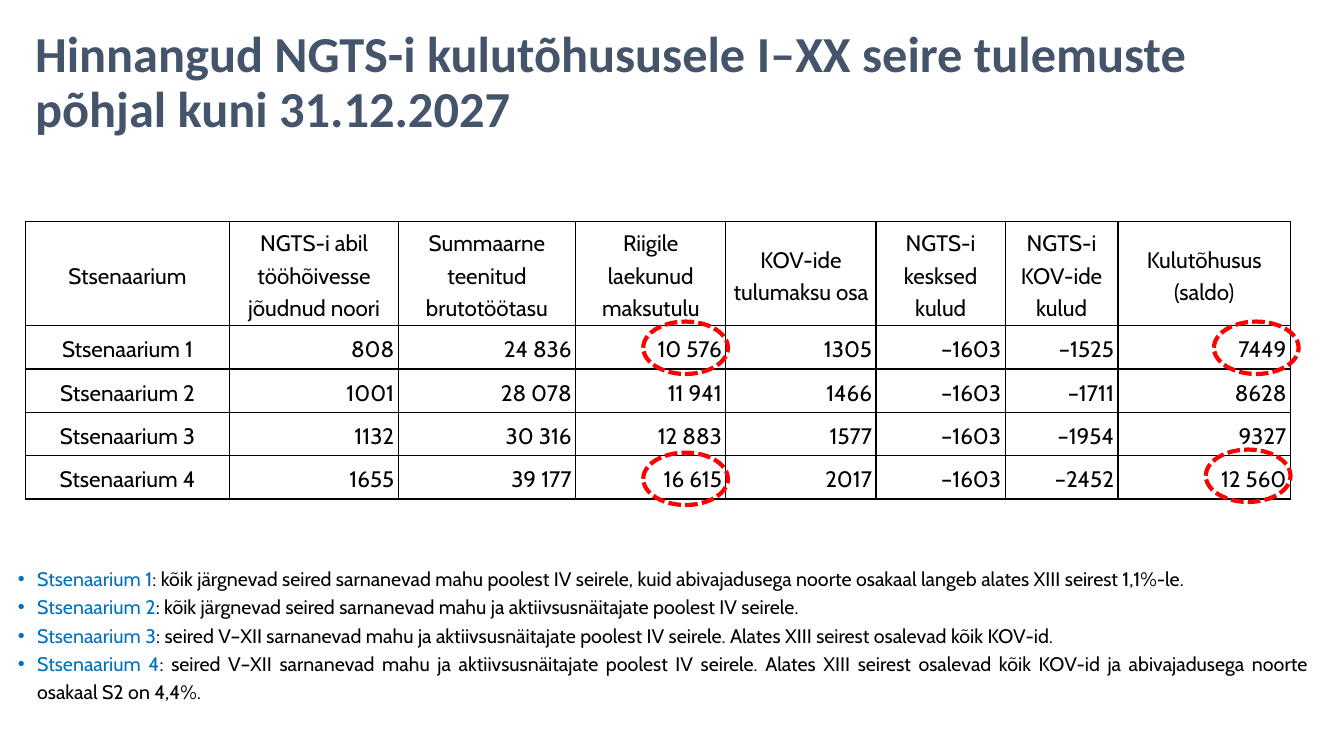
from dataclasses import dataclass

from lxml.etree import SubElement
from pptx import Presentation
from pptx.dml.color import RGBColor
from pptx.enum.dml import MSO_LINE
from pptx.enum.shapes import MSO_SHAPE
from pptx.enum.text import MSO_ANCHOR, PP_ALIGN
from pptx.oxml.ns import qn
from pptx.util import Inches, Pt


@dataclass(frozen=True)
class Theme:
    title_font: str = "Calibri"
    body_font: str = "Cabin"
    title_color: str = "44546A"
    ink: str = "000000"
    accent: str = "0070C0"
    mark: str = "FF0000"
    title_size: int = 36
    table_size: int = 16
    note_size: int = 14
    border_width: int = 1
    mark_width: int = 3


theme = Theme()


def add_text(p, text, font=theme.body_font, size=theme.table_size,
             color=theme.ink, bold=False, align=None, spacing=1.2, after=0):
    p.alignment = align
    p.line_spacing = spacing
    p.space_after = Pt(after)
    r = p.add_run()
    r.text = text
    r.font.name = font
    r.font.size = Pt(size)
    r.font.bold = bold
    r.font.color.rgb = RGBColor.from_string(color)


def add_borders(cell):
    tc_pr = cell._tc.get_or_add_tcPr()
    for side in ("lnL", "lnR", "lnT", "lnB"):
        ln = SubElement(tc_pr, qn(f"a:{side}"), w=str(Pt(theme.border_width)))
        fill = SubElement(ln, qn("a:solidFill"))
        SubElement(fill, qn("a:srgbClr"), val=theme.ink)


prs = Presentation()
prs.slide_width = Inches(13.33)
prs.slide_height = Inches(7.5)
s = prs.slides.add_slide(prs.slide_layouts[6])

title = s.shapes.add_textbox(Inches(0.25), Inches(0.18), Inches(12.66), Inches(1.3))
tf = title.text_frame
tf.word_wrap = True
tf.vertical_anchor = MSO_ANCHOR.MIDDLE
add_text(tf.paragraphs[0],
         "Hinnangud NGTS-i kulutõhususele I–XX seire tulemuste põhjal kuni 31.12.2027",
         font=theme.title_font, size=theme.title_size, color=theme.title_color,
         bold=True, spacing=0.9)

notes = [
    ": kõik järgnevad seired sarnanevad mahu poolest IV seirele, kuid abivajadusega "
    "noorte osakaal langeb alates XIII seirest 1,1%-le.",
    ": kõik järgnevad seired sarnanevad mahu ja aktiivsusnäitajate poolest IV seirele.",
    ": seired V–XII sarnanevad mahu ja aktiivsusnäitajate poolest IV seirele. "
    "Alates XIII seirest osalevad kõik KOV-id.",
    ": seired V–XII sarnanevad mahu ja aktiivsusnäitajate poolest IV seirele. "
    "Alates XIII seirest osalevad kõik KOV-id ja abivajadusega noorte osakaal S2 on 4,4%.",
]
box = s.shapes.add_textbox(Inches(0.08), Inches(5.53), Inches(13), Inches(1.49))
tf = box.text_frame
tf.word_wrap = True
for i, note in enumerate(notes, 1):
    p = tf.paragraphs[0] if i == 1 else tf.add_paragraph()
    after = 10 if i == len(notes) else 0
    for text, color in ((f"Stsenaarium {i}", theme.accent), (note, theme.ink)):
        add_text(p, text, size=theme.note_size, color=color,
                 align=PP_ALIGN.JUSTIFY, after=after)
    p_pr = p._p.get_or_add_pPr()
    p_pr.set("marL", str(Inches(0.19)))
    p_pr.set("indent", str(-Inches(0.19)))
    SubElement(p_pr, qn("a:buFont"), typeface="Arial")
    SubElement(p_pr, qn("a:buChar"), char="•")

rows = [
    ["Stsenaarium", "NGTS-i abil tööhõivesse jõudnud noori",
     "Summaarne teenitud brutotöötasu", "Riigile laekunud maksutulu",
     "KOV-ide tulumaksu osa", "NGTS-i kesksed kulud", "NGTS-i KOV-ide kulud",
     "Kulutõhusus (saldo)"],
    ["Stsenaarium 1", "808", "24 836", "10 576", "1305", "–1603", "–1525", "7449"],
    ["Stsenaarium 2", "1001", "28 078", "11 941", "1466", "–1603", "–1711", "8628"],
    ["Stsenaarium 3", "1132", "30 316", "12 883", "1577", "–1603", "–1954", "9327"],
    ["Stsenaarium 4", "1655", "39 177", "16 615", "2017", "–1603", "–2452", "12 560"],
]
widths = [2.03, 1.67, 1.76, 1.49, 1.49, 1.28, 1.12, 1.71]
table = s.shapes.add_table(len(rows), len(widths), Inches(0.25), Inches(2.2),
                           Inches(12.54), Inches(2.76)).table
table.first_row = False
table.horz_banding = False
for column, width in zip(table.columns, widths):
    column.width = Inches(width)
for i, values in enumerate(rows):
    table.rows[i].height = Inches(0.43 if i else 1.03)
    for j, value in enumerate(values):
        cell = table.cell(i, j)
        cell.margin_left = cell.margin_right = Inches(0.04)
        cell.margin_top = cell.margin_bottom = 0
        cell.vertical_anchor = MSO_ANCHOR.MIDDLE
        add_borders(cell)
        cell.fill.background()
        add_text(cell.text_frame.paragraphs[0], value, after=10,
                 align=PP_ALIGN.RIGHT if i and j else PP_ALIGN.CENTER)

for x, y in ((12.04, 3.19), (11.96, 4.46), (6.38, 3.19), (6.38, 4.49)):
    sp = s.shapes.add_shape(MSO_SHAPE.OVAL, Inches(x), Inches(y), Inches(0.84), Inches(0.52))
    sp.shadow.inherit = False
    sp.fill.background()
    sp.line.color.rgb = RGBColor.from_string(theme.mark)
    sp.line.width = Pt(theme.mark_width)
    sp.line.dash_style = MSO_LINE.SQUARE_DOT

prs.save("out.pptx")
